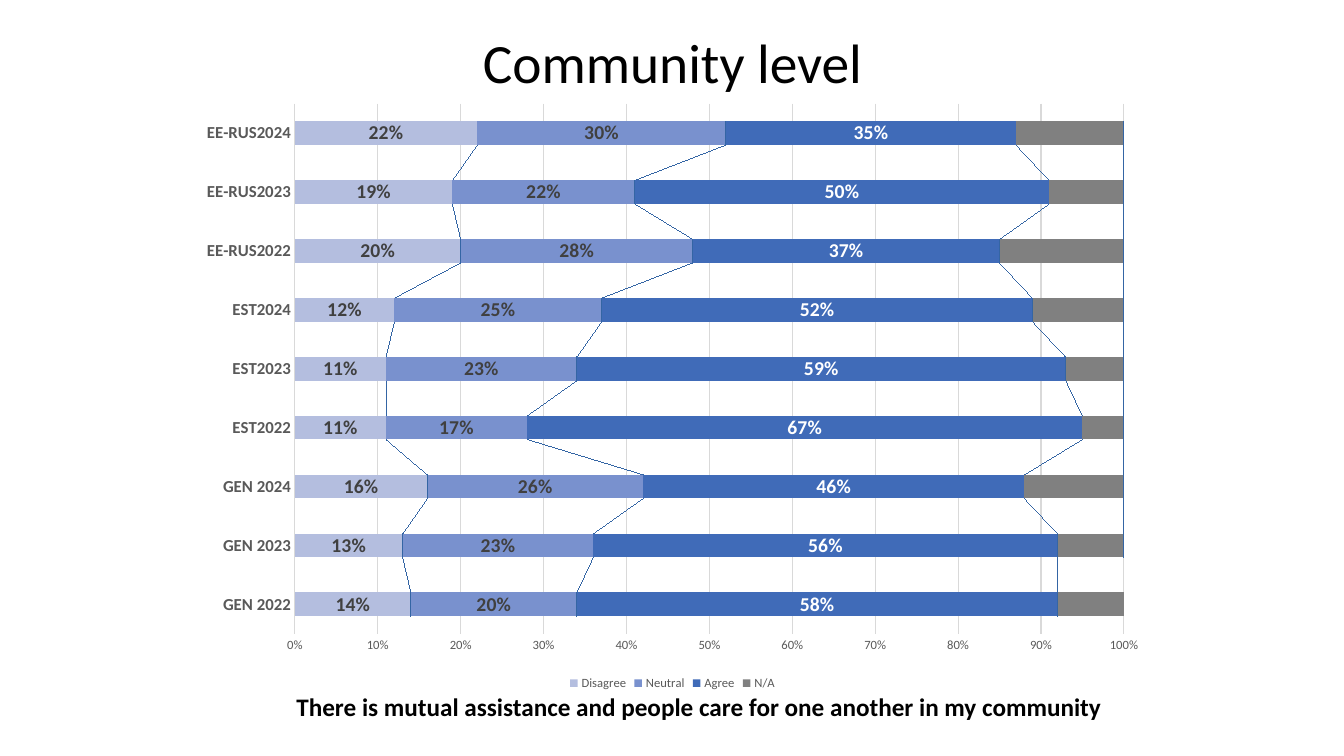
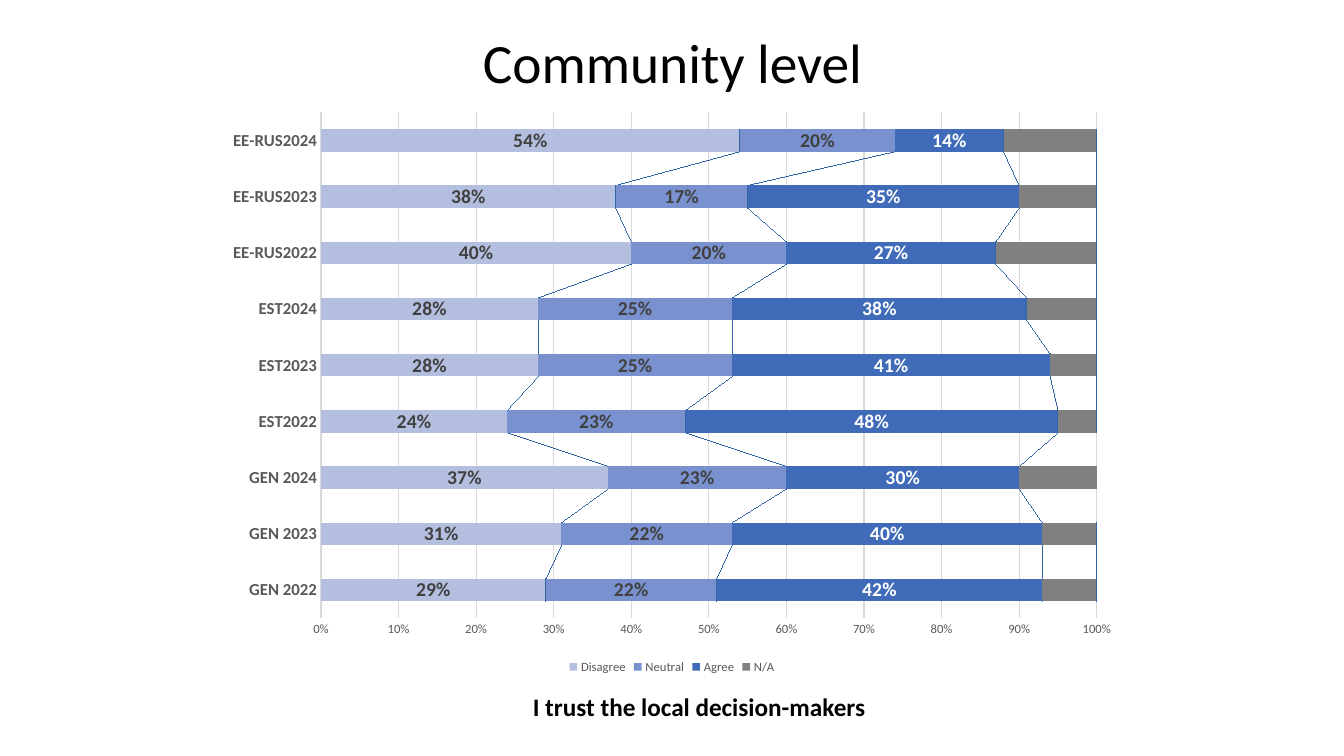
"""Two survey slides: stacked bars of answers by group and year."""
from dataclasses import dataclass

import lxml.etree
import pptx
import pptx.chart.chart
import pptx.chart.data
import pptx.dml.color
import pptx.enum.chart
import pptx.enum.text
import pptx.oxml.ns
import pptx.slide
import pptx.text.text
import pptx.util

FONT = "Calibri"
BLACK, WHITE = "000000", "FFFFFF"
AXIS_TEXT, GRID, LABEL_TEXT = "595959", "D9D9D9", "404040"
SERIES_LINE = "3465A4"
TITLE = "Community level"
GROUPS = [
    "GEN 2022", "GEN 2023", "GEN 2024",
    "EST2022", "EST2023", "EST2024",
    "EE-RUS2022", "EE-RUS2023", "EE-RUS2024",
]


@dataclass(frozen=True)
class Answer:
    """One answer option; without a label colour it shows no values."""
    name: str
    fill: str
    label_color: str | None = None


@dataclass(frozen=True)
class Area:
    """A place on the slide, in inches."""
    left: float
    top: float
    width: float
    height: float

    def lengths(self) -> list[pptx.util.Length]:
        sides = (self.left, self.top, self.width, self.height)
        return [pptx.util.Inches(side) for side in sides]


@dataclass(frozen=True)
class SurveyPage:
    """One statement with the percentages of each answer, by group."""
    statement: str
    chart_area: Area
    percentages: list[list[int]]


ANSWERS = [
    Answer("Disagree", "B4BEDF", LABEL_TEXT),
    Answer("Neutral", "7991CE", LABEL_TEXT),
    Answer("Agree", "406BB8", WHITE),
    Answer("N/A", "808080"),
]
TITLE_AREA = Area(0.92, 0.4, 11.5, 0.51)
STATEMENT_AREA = Area(2.77, 6.81, 8.33, 0.4)

PAGES = [
    SurveyPage(
        "There is mutual assistance and people care for one another in my community",
        Area(1.86, 0.91, 9.62, 5.98),
        [
            [14, 13, 16, 11, 11, 12, 20, 19, 22],
            [20, 23, 26, 17, 23, 25, 28, 22, 30],
            [58, 56, 46, 67, 59, 52, 37, 50, 35],
            [8, 8, 12, 5, 7, 11, 15, 9, 13],
        ],
    ),
    SurveyPage(
        "I trust the local decision-makers",
        Area(2.13, 1, 9.07, 5.73),
        [
            [29, 31, 37, 24, 28, 28, 40, 38, 54],
            [22, 22, 23, 23, 25, 25, 20, 17, 20],
            [42, 40, 30, 48, 41, 38, 27, 35, 14],
            [7, 7, 10, 5, 6, 9, 13, 10, 12],
        ],
    ),
]


def rgb(value: str) -> pptx.dml.color.RGBColor:
    return pptx.dml.color.RGBColor.from_string(value)


def style_font(font: pptx.text.text.Font, size: float, color: str, bold: bool = False) -> None:
    font.name = FONT
    font.size = pptx.util.Pt(size)
    font.bold = bold
    font.color.rgb = rgb(color)


def set_centred_text(frame: pptx.text.text.TextFrame, text: str, size: float, bold: bool) -> None:
    frame.word_wrap = True
    frame.text = text
    para = frame.paragraphs[0]
    para.alignment = pptx.enum.text.PP_ALIGN.CENTER
    style_font(para.runs[0].font, size, BLACK, bold)


def add_title(page: pptx.slide.Slide) -> None:
    title = page.shapes.title
    title.left, title.top, title.width, title.height = TITLE_AREA.lengths()
    frame = title.text_frame
    set_centred_text(frame, TITLE, 39.6, False)
    frame.auto_size = pptx.enum.text.MSO_AUTO_SIZE.NONE
    frame.vertical_anchor = pptx.enum.text.MSO_ANCHOR.MIDDLE
    frame.paragraphs[0].line_spacing = 0.9


def add_statement(page: pptx.slide.Slide, statement: str) -> None:
    box = page.shapes.add_textbox(*STATEMENT_AREA.lengths())
    set_centred_text(box.text_frame, statement, 18, True)
    box.text_frame.auto_size = pptx.enum.text.MSO_AUTO_SIZE.SHAPE_TO_FIT_TEXT


def style_axes(chart: pptx.chart.chart.Chart) -> None:
    groups, scale = chart.category_axis, chart.value_axis
    for axis in (groups, scale):
        axis.major_tick_mark = pptx.enum.chart.XL_TICK_MARK.NONE
        axis.minor_tick_mark = pptx.enum.chart.XL_TICK_MARK.NONE
    style_font(groups.tick_labels.font, 12, AXIS_TEXT, True)
    style_font(scale.tick_labels.font, 9, AXIS_TEXT)
    scale.tick_labels.number_format = "0%"
    scale.tick_labels.number_format_is_linked = False
    scale.format.line.fill.background()
    scale.has_major_gridlines = True
    for line in (groups.format.line, scale.major_gridlines.format.line):
        line.color.rgb = rgb(GRID)
        line.width = pptx.util.Pt(0.75)


def add_series_lines(chart: pptx.chart.chart.Chart) -> None:
    """Join the same answer from bar to bar; the lines precede the axis ids."""
    qn = pptx.oxml.ns.qn
    bar_chart = chart._chartSpace.find(".//" + qn("c:barChart"))
    lines = lxml.etree.Element(qn("c:serLines"))
    parent = lines
    for tag in ("c:spPr", "a:ln", "a:solidFill", "a:srgbClr"):
        parent = lxml.etree.SubElement(parent, qn(tag))
    parent.set("val", SERIES_LINE)
    bar_chart.find(qn("c:axId")).addprevious(lines)


def add_survey_chart(page: pptx.slide.Slide, survey: SurveyPage) -> None:
    data = pptx.chart.data.CategoryChartData(number_format="0%")
    data.categories = GROUPS
    for answer, values in zip(ANSWERS, survey.percentages):
        data.add_series(answer.name, [value / 100 for value in values])
    chart = page.shapes.add_chart(
        pptx.enum.chart.XL_CHART_TYPE.BAR_STACKED_100, *survey.chart_area.lengths(), data
    ).chart
    style_font(chart.font, 10, BLACK)
    chart.has_title = False

    # Bars and their values
    plot = chart.plots[0]
    plot.gap_width, plot.overlap = 150, 100
    plot.vary_by_categories = False
    for answer, series in zip(ANSWERS, plot.series):
        series.format.fill.solid()
        series.format.fill.fore_color.rgb = rgb(answer.fill)
        if answer.label_color:
            labels = series.data_labels
            labels.show_value = True
            labels.number_format = "0%"
            labels.number_format_is_linked = False
            style_font(labels.font, 14, answer.label_color, True)
    add_series_lines(chart)
    style_axes(chart)

    # Legend
    chart.has_legend = True
    chart.legend.position = pptx.enum.chart.XL_LEGEND_POSITION.BOTTOM
    chart.legend.include_in_layout = False
    style_font(chart.legend.font, 9, AXIS_TEXT)


def main() -> None:
    deck = pptx.Presentation()
    deck.slide_width = pptx.util.Inches(13.33)
    deck.slide_height = pptx.util.Inches(7.5)
    title_only = deck.slide_layouts.get_by_name("Title Only")
    for survey in PAGES:
        page = deck.slides.add_slide(title_only)
        add_title(page)
        add_statement(page, survey.statement)
        add_survey_chart(page, survey)
    deck.save("out.pptx")


if __name__ == "__main__":
    main()
